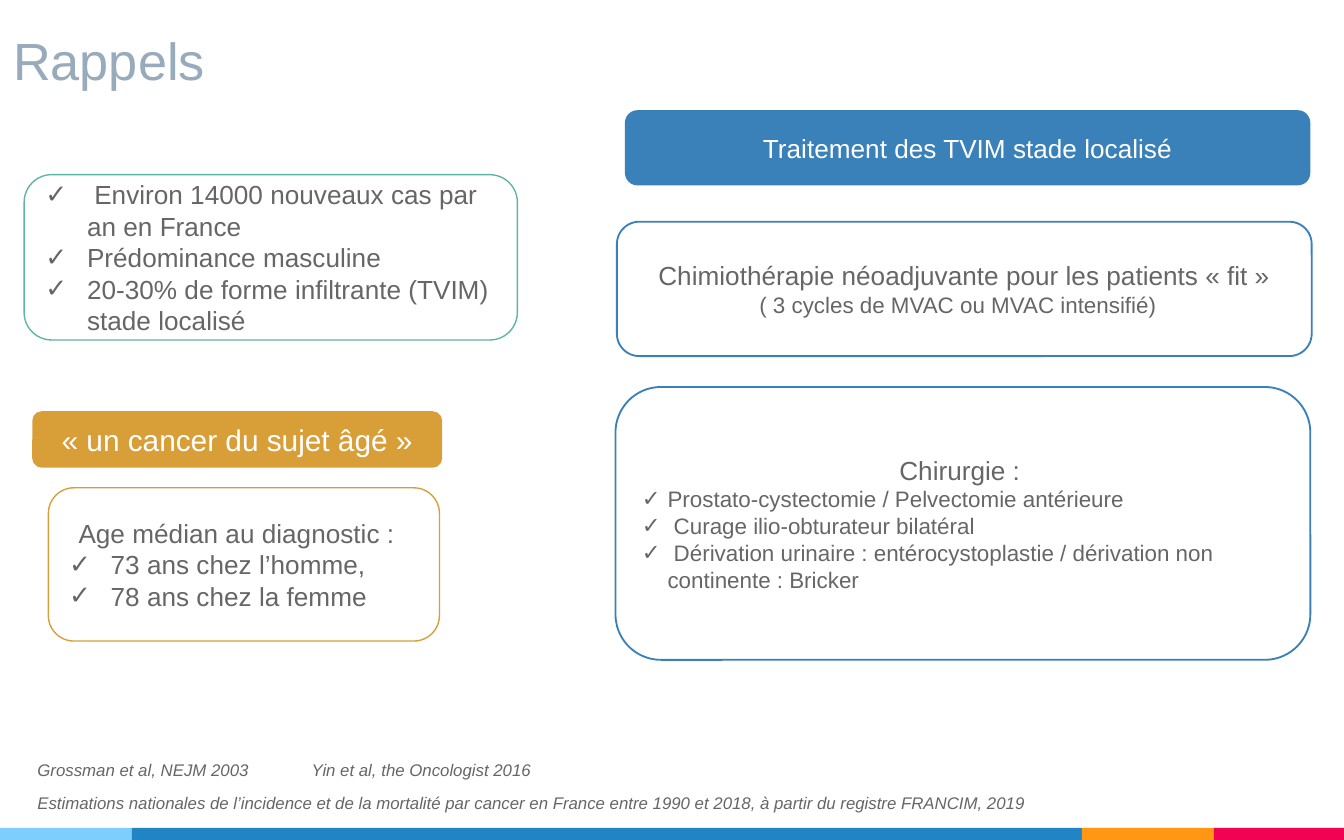
from dataclasses import dataclass
from typing import Optional

from lxml import etree
from pptx import Presentation
from pptx.dml.color import RGBColor
from pptx.enum.shapes import MSO_SHAPE
from pptx.enum.text import MSO_ANCHOR, PP_ALIGN
from pptx.oxml.ns import qn
from pptx.util import Inches, Pt

RECTANGLE = MSO_SHAPE.RECTANGLE
ROUNDED = MSO_SHAPE.ROUNDED_RECTANGLE
MIDDLE, BOTTOM = MSO_ANCHOR.MIDDLE, MSO_ANCHOR.BOTTOM
LEFT, CENTER = PP_ALIGN.LEFT, PP_ALIGN.CENTER

FONT = "Arial"
GREY, WHITE, TITLE_COLOR = "666666", "FFFFFF", "97ABBC"
GOLD, GREEN, BLUE = "D89F39", "5FB4A3", "3A81BA"


@dataclass
class Run:
    text: str
    size: float = 14
    color: str = GREY
    italic: bool = False


@dataclass
class Line:
    runs: list[Run]
    align: PP_ALIGN = LEFT
    bullet_indent: float = 0


@dataclass
class Card:
    left: float
    top: float
    width: float
    height: float
    lines: list[Line]
    fill: Optional[str] = None
    outline: Optional[str] = None
    outline_width: float = 0.75


@dataclass
class Note:
    left: float
    top: float
    width: float
    height: float
    run: Run
    wrap: bool = False


def rgb(color: str) -> RGBColor:
    return RGBColor.from_string(color)


def centered(text: str, size: float = 14, color: str = GREY) -> Line:
    return Line([Run(text, size, color)], CENTER)


def bullets(texts: list[str], size: float, indent: float) -> list[Line]:
    return [Line([Run(text, size)], LEFT, indent) for text in texts]


def set_check_bullet(paragraph, indent: float) -> None:
    properties = paragraph._p.get_or_add_pPr()
    properties.set("marL", str(Inches(indent)))
    properties.set("indent", str(-Inches(indent)))
    etree.SubElement(properties, qn("a:buFont")).set("typeface", FONT)
    etree.SubElement(properties, qn("a:buChar")).set("char", "✓")


def write_lines(text_frame, lines: list[Line]) -> None:
    for index, line in enumerate(lines):
        paragraph = text_frame.add_paragraph() if index else text_frame.paragraphs[0]
        paragraph.alignment = line.align
        if line.bullet_indent:
            set_check_bullet(paragraph, line.bullet_indent)
        for item in line.runs:
            run = paragraph.add_run()
            run.text = item.text
            run.font.name = FONT
            run.font.size = Pt(item.size)
            run.font.italic = item.italic
            run.font.color.rgb = rgb(item.color)


def draw_card(slide, card: Card, kind: MSO_SHAPE = ROUNDED) -> None:
    shape = slide.shapes.add_shape(
        kind, Inches(card.left), Inches(card.top), Inches(card.width), Inches(card.height))
    shape.shadow.inherit = False
    if card.fill:
        shape.fill.solid()
        shape.fill.fore_color.rgb = rgb(card.fill)
    else:
        shape.fill.background()
    if card.outline:
        shape.line.color.rgb = rgb(card.outline)
        shape.line.width = Pt(card.outline_width)
    else:
        shape.line.fill.background()
    shape.text_frame.word_wrap = True
    shape.text_frame.vertical_anchor = MIDDLE
    write_lines(shape.text_frame, card.lines)


def draw_note(slide, note: Note):
    box = slide.shapes.add_textbox(
        Inches(note.left), Inches(note.top), Inches(note.width), Inches(note.height))
    box.text_frame.word_wrap = note.wrap
    write_lines(box.text_frame, [Line([note.run])])
    return box


def draw_footer_band(slide) -> None:
    left = 0.0
    for width, color in [(0.98, "7ECEFD"), (7.07, "2185C5"), (0.98, "FF9715"), (0.97, "F20253")]:
        draw_card(slide, Card(left, 6.16, width, 0.09, [], fill=color), RECTANGLE)
        left += width


def draw_title(slide) -> None:
    frame = draw_note(
        slide, Note(0, -0.01, 7.07, 0.79, Run("Rappels", 28, TITLE_COLOR), True)).text_frame
    frame.vertical_anchor = BOTTOM
    frame.margin_top = frame.margin_bottom = Inches(0.1)


CARDS = [
    Card(0.36, 3.63, 2.91, 1.14, [
        centered("Age médian au diagnostic :  "),
        *bullets(["73 ans chez l’homme,", "78 ans chez la femme"], 14, 0.31),
    ], outline=GOLD),
    Card(0.24, 3.06, 3.05, 0.42,
         [centered("« un cancer du sujet âgé »", 16, WHITE)], fill=GOLD),
    Card(0.18, 1.3, 3.67, 1.23, bullets([
        " Environ 14000 nouveaux cas par an en France",
        "Prédominance masculine",
        "20-30% de forme infiltrante (TVIM) stade localisé",
    ], 14, 0.31), outline=GREEN),
    Card(4.65, 0.82, 5.1, 0.56,
         [centered("Traitement des TVIM stade localisé", 14, WHITE)], fill=BLUE),
    Card(4.59, 1.65, 5.17, 1, [
        centered("Chimiothérapie néoadjuvante pour les patients « fit »"),
        centered("( 3 cycles de MVAC ou MVAC intensifié)  ", 12),
    ], outline=BLUE, outline_width=1),
    Card(4.58, 2.88, 5.17, 2.03, [
        Line([Run("Chirurgie :"), Run(" ", 12)], CENTER),
        *bullets([
            "Prostato-cystectomie / Pelvectomie antérieure",
            " Curage ilio-obturateur bilatéral",
            " Dérivation urinaire : entérocystoplastie / dérivation non continente : Bricker",
        ], 12, 0.19),
    ], outline=BLUE, outline_width=1),
]

REFERENCES = [
    Note(0.18, 5.85, 7.6, 0.25, Run(
        "Estimations nationales de l’incidence et de la mortalité par cancer en France "
        "entre 1990 et 2018, à partir du registre FRANCIM, 2019", 9, italic=True)),
    Note(0.18, 5.6, 1.78, 0.25, Run("Grossman et al, NEJM 2003", 9, italic=True)),
    Note(2.22, 5.6, 1.89, 0.25, Run("Yin et al, the Oncologist 2016", 9, italic=True), True),
]


def main() -> None:
    presentation = Presentation()
    presentation.slide_width = Inches(10)
    presentation.slide_height = Inches(6.25)
    slide = presentation.slides.add_slide(presentation.slide_layouts[6])
    draw_footer_band(slide)
    draw_title(slide)
    for card in CARDS:
        draw_card(slide, card)
    for reference in REFERENCES:
        draw_note(slide, reference)
    presentation.save("out.pptx")


if __name__ == "__main__":
    main()
